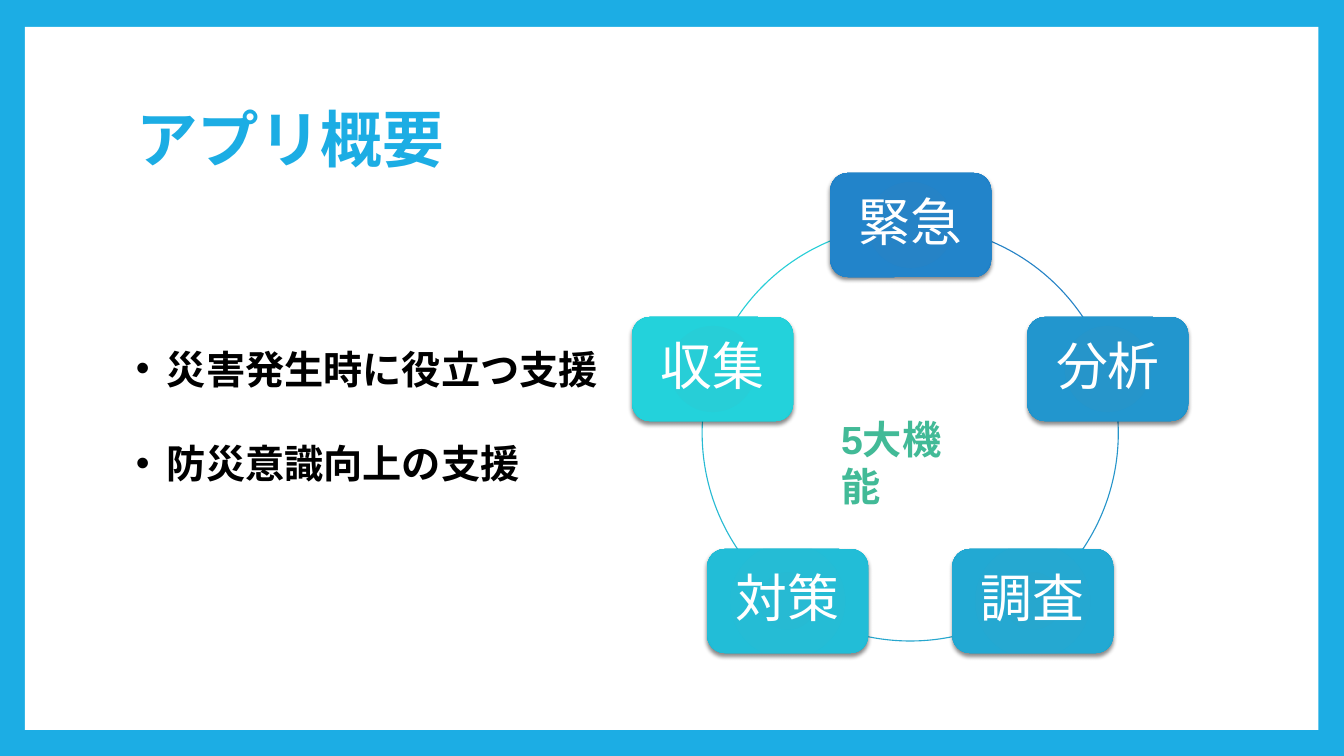
from math import cos, radians, sin

from lxml import etree
from pptx import Presentation
from pptx.dml.color import RGBColor
from pptx.enum.lang import MSO_LANGUAGE_ID
from pptx.enum.shapes import MSO_SHAPE
from pptx.enum.text import MSO_ANCHOR, MSO_AUTO_SIZE, PP_ALIGN
from pptx.oxml import parse_xml
from pptx.oxml.ns import qn
from pptx.util import Inches, Pt

LEFT, CENTER = PP_ALIGN.LEFT, PP_ALIGN.CENTER
TOP, MIDDLE = MSO_ANCHOR.TOP, MSO_ANCHOR.MIDDLE
RECTANGLE, ROUNDED, ARC = MSO_SHAPE.RECTANGLE, MSO_SHAPE.ROUNDED_RECTANGLE, MSO_SHAPE.ARC
NO_AUTOFIT = MSO_AUTO_SIZE.NONE
JAPANESE = MSO_LANGUAGE_ID.JAPANESE
EMU_PER_PX = 914400 / 100.8
TITLE_ONLY = 5
DRAWING_NS = "http://schemas.openxmlformats.org/drawingml/2006/main"

COLORS = {"frame": "1CADE4", "panel": "FFFFFF", "text": "000000", "caption": "42BA97", "shadow": "000000"}
FEATURES = {
    "緊急": ("2683C6", "2284CA", "1479C2"),
    "分析": ("2695CA", "2296CE", "148CC6"),
    "調査": ("27A7CE", "22A9D3", "14A0CB"),
    "対策": ("27BAD3", "22BDD7", "14B4CF"),
    "収集": ("27CED7", "23D2DB", "13C9D3"),
}
GRADIENT_STOPS = (0, 90, 100)
RING_X, RING_Y, RING_RADIUS = 910, 433, 208
NODE_WIDTH, NODE_HEIGHT = 161, 104


def px(length):
    """Turn pixels into EMU."""
    return round(length * EMU_PER_PX)


def write_text(frame, text, size=28, font="Calibri", color="000000", bold=False, align=LEFT,
               anchor=TOP, line_spacing=None, gap=0, bullet=False, inset=None):
    """Write one paragraph per line of text into a text frame."""
    frame.word_wrap = True
    frame.auto_size = NO_AUTOFIT
    frame.vertical_anchor = anchor
    if inset is not None:
        frame.margin_left = frame.margin_right = px(inset)
        frame.margin_top = frame.margin_bottom = px(inset)
    for index, line in enumerate(text.split("\n")):
        paragraph = frame.add_paragraph() if index else frame.paragraphs[0]
        paragraph.alignment = align
        paragraph.line_spacing = line_spacing
        if index:
            paragraph.space_before = Pt(gap)
        run = paragraph.add_run()
        run.text = line
        run.font.size, run.font.name, run.font.bold = Pt(size), font, bold
        run.font.color.rgb = RGBColor.from_string(color)
        run.font.language_id = JAPANESE
        if bullet:
            properties = paragraph._p.get_or_add_pPr()
            properties.set("marL", str(px(31)))
            properties.set("indent", str(-px(31)))
            etree.SubElement(properties, qn("a:buFont"), typeface="Arial")
            etree.SubElement(properties, qn("a:buChar"), char="•")


class SlideBuilder:
    """Hold the style and the current slide, and draw its elements."""

    def __init__(self, presentation, colors):
        """Add a title-only slide with a coloured background."""
        self.colors = colors
        self.slide = presentation.slides.add_slide(presentation.slide_layouts[TITLE_ONLY])
        background = self.slide.background.fill
        background.solid()
        background.fore_color.rgb = RGBColor.from_string(colors["frame"])

    def shape(self, kind, left, top, width, height):
        """Add a preset shape without line or shadow."""
        shape = self.slide.shapes.add_shape(kind, px(left), px(top), px(width), px(height))
        shape.shadow.inherit = False
        shape.line.fill.background()
        return shape

    def panel(self, left, top, width, height):
        """Place the plain panel behind everything else."""
        shape = self.shape(RECTANGLE, left, top, width, height)
        shape.fill.solid()
        shape.fill.fore_color.rgb = RGBColor.from_string(self.colors["panel"])
        self.slide.shapes._spTree.insert(2, shape._element)

    def title(self, text, left, top, width, height):
        """Move and format the title placeholder."""
        title = self.slide.shapes.title
        title.left, title.top, title.width, title.height = px(left), px(top), px(width), px(height)
        write_text(title.text_frame, text, size=44, color=self.colors["frame"], bold=True,
                   anchor=MIDDLE, line_spacing=0.9)

    def text(self, text, left, top, width, height, **text_format):
        """Add a text box."""
        box = self.slide.shapes.add_textbox(px(left), px(top), px(width), px(height))
        write_text(box.text_frame, text, **text_format)

    def arc(self, center_x, center_y, radius, start, end, color):
        """Draw a circular arc between two angles in degrees."""
        arc = self.shape(ARC, center_x - radius, center_y - radius, 2 * radius, 2 * radius)
        for index, angle in enumerate((start, end)):
            arc.adjustments[index] = angle % 360 * 0.6
        arc.fill.background()
        arc.line.color.rgb = RGBColor.from_string(color)
        arc.line.width = Pt(0.79)

    def node(self, text, center_x, center_y, gradient):
        """Draw a rounded box with a radial gradient and a soft shadow."""
        node = self.shape(ROUNDED, round(center_x - NODE_WIDTH / 2), round(center_y - NODE_HEIGHT / 2),
                          NODE_WIDTH, NODE_HEIGHT)
        node.fill.solid()
        properties = node._element.spPr
        stops = "".join(f'<a:gs pos="{position * 1000}"><a:srgbClr val="{color}"/></a:gs>'
                        for position, color in zip(GRADIENT_STOPS, gradient))
        properties.replace(properties.find(qn("a:solidFill")), parse_xml(
            f'<a:gradFill xmlns:a="{DRAWING_NS}" rotWithShape="1"><a:gsLst>{stops}</a:gsLst>'
            '<a:path path="circle"><a:fillToRect l="100000" t="100000" r="100000" b="100000"/>'
            '</a:path></a:gradFill>'))
        properties.find(qn("a:effectLst")).append(parse_xml(
            f'<a:outerShdw xmlns:a="{DRAWING_NS}" blurRad="{Pt(3)}" dist="{Pt(2)}" dir="5400000" '
            f'rotWithShape="0"><a:srgbClr val="{self.colors["shadow"]}"><a:alpha val="45000"/>'
            '</a:srgbClr></a:outerShdw>'))
        write_text(node.text_frame, text, size=37, color=self.colors["panel"], align=CENTER,
                   anchor=MIDDLE, line_spacing=0.9, inset=20)

    def cycle(self, features):
        """Spread the features evenly around the ring, clockwise from the top."""
        step = 360 / len(features)
        angles = [index * step - 90 for index in range(len(features))]
        for angle, gradient in zip(angles, features.values()):
            self.arc(RING_X, RING_Y, RING_RADIUS, angle, angle + step, gradient[0])
        for angle, (name, gradient) in zip(angles, features.items()):
            self.node(name, RING_X + RING_RADIUS * cos(radians(angle)),
                      RING_Y + RING_RADIUS * sin(radians(angle)), gradient)


def main():
    """Build the app overview slide and save it."""
    presentation = Presentation()
    presentation.slide_width, presentation.slide_height = Inches(13.33), Inches(7.5)
    overview = SlideBuilder(presentation, COLORS)
    overview.panel(25, 27, 1293, 703)
    overview.title("アプリ概要", 126, 68, 1089, 149)
    overview.cycle(FEATURES)
    overview.text("5大機能", 831, 410, 159, 104, font="Arial", color=COLORS["caption"], bold=True)
    overview.text("災害発生時に役立つ支援\n防災意識向上の支援", 126, 340, 488, 152,
                  color=COLORS["text"], bold=True, bullet=True, gap=34)
    presentation.save("out.pptx")


if __name__ == "__main__":
    main()
